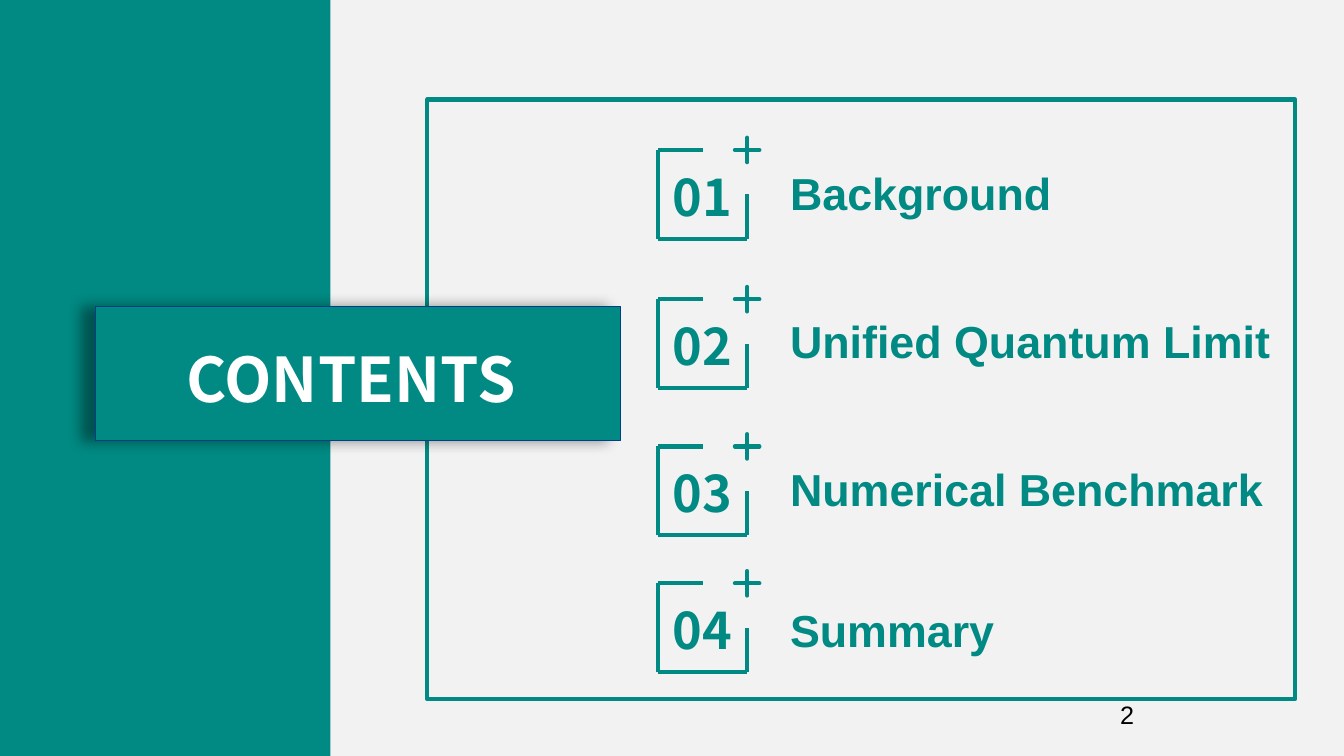
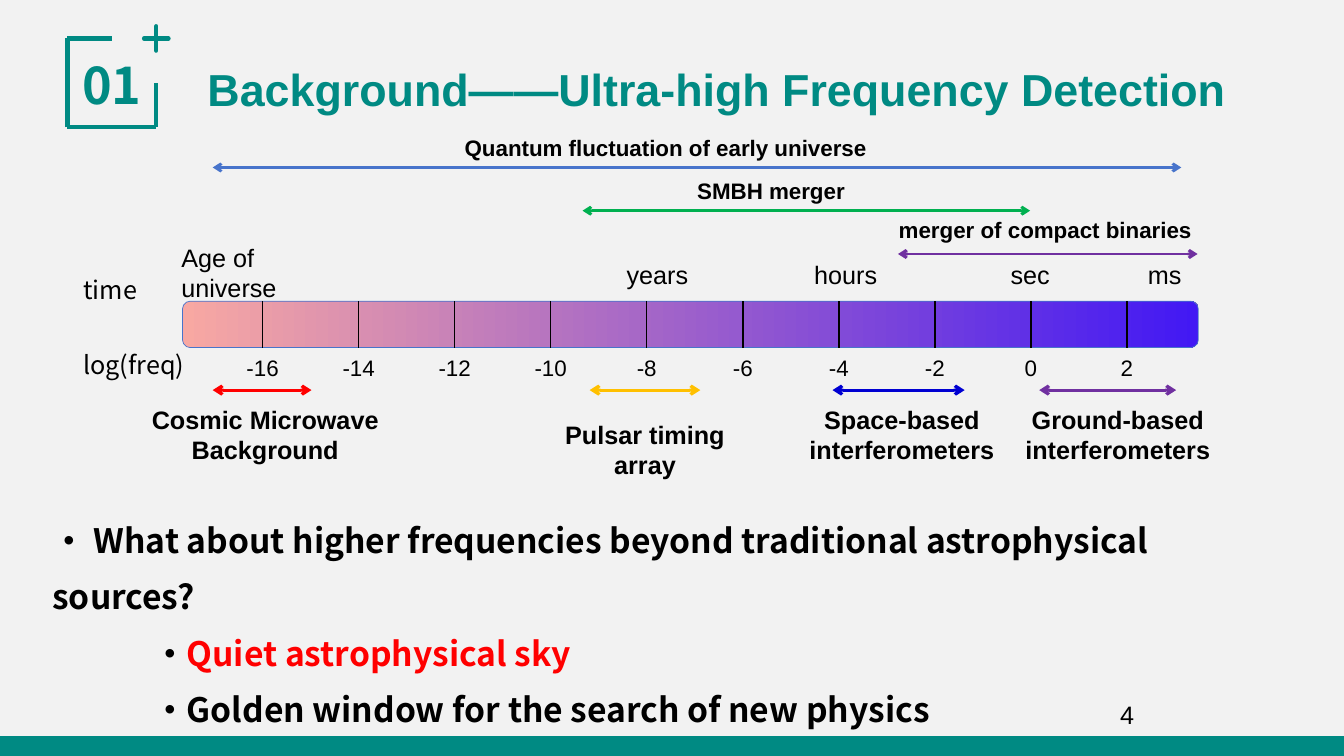
from dataclasses import dataclass
from typing import NamedTuple

from lxml.etree import SubElement
from pptx import Presentation
from pptx.dml.color import RGBColor
from pptx.enum.shapes import MSO_CONNECTOR, MSO_SHAPE
from pptx.enum.text import MSO_ANCHOR, PP_ALIGN
from pptx.oxml.ns import qn
from pptx.shapes.autoshape import Shape
from pptx.shapes.connector import Connector
from pptx.slide import Slide
from pptx.text.text import _Paragraph as Paragraph
from pptx.text.text import _Run as Run
from pptx.util import Cm, Pt


@dataclass(frozen=True)
class Theme:
    background: str = "F2F2F2"
    teal: str = "008A83"
    navy: str = "003E87"
    blue: str = "4874CB"
    black: str = "000000"
    white: str = "FFFFFF"
    red: str = "FF0000"
    green: str = "00B050"
    amber: str = "FFC000"
    deep_blue: str = "0000D2"
    purple: str = "7030A0"
    low_frequency: str = "F8A8A2"
    high_frequency: str = "4218F4"
    latin_font: str = "Arial"
    display_font: str = "Noto Sans CJK SC"
    banner_size: float = 44
    badge_size: float = 36
    title_size: float = 32
    body_size: float = 24
    label_size: float = 18
    small_size: float = 16
    rule_width: float = 3


THEME = Theme()
SLIDE_WIDTH, SLIDE_HEIGHT = 33.87, 19.05


class Box(NamedTuple):
    """Left, top, width and height in centimetres."""
    left: float
    top: float
    width: float
    height: float


class Style(NamedTuple):
    size: float
    color: str = THEME.black
    bold: bool = False
    font: str = THEME.latin_font
    align: PP_ALIGN = PP_ALIGN.LEFT


class Entry(NamedTuple):
    title: str
    badge_top: float
    title_top: float


class Span(NamedTuple):
    """A double arrow on the frequency axis with its label."""
    label: str
    color: str
    start: float
    end: float
    y: float
    label_box: Box


class Label(NamedTuple):
    text: str
    box: Box
    style: Style


TITLE = Style(THEME.title_size, THEME.teal, True)
BADGE = Style(THEME.badge_size, THEME.teal, True, THEME.display_font, PP_ALIGN.CENTER)
BANNER = Style(THEME.banner_size, THEME.white, True, THEME.display_font)
PAGE_NUMBER = Style(THEME.label_size, align=PP_ALIGN.CENTER)
TIME = Style(THEME.label_size)
AXIS = Style(THEME.label_size, font=THEME.display_font)
TICK = Style(THEME.small_size, align=PP_ALIGN.CENTER)
SOURCE = Style(THEME.small_size, bold=True)
DETECTOR = Style(THEME.label_size, bold=True, align=PP_ALIGN.CENTER)
BODY = Style(THEME.body_size, bold=True, font=THEME.display_font)

ENTRIES = (
    Entry("Background", 3.78, 4.06),
    Entry("Unified Quantum Limit", 7.54, 7.77),
    Entry("Numerical Benchmark", 11.25, 11.51),
    Entry("Summary", 14.7, 15.06),
)

SOURCES = (
    Span("Quantum fluctuation of early universe", THEME.blue, 5.36, 29.77, 4.22,
         Box(11.46, 3.25, 13.3, 0.94)),
    Span("SMBH merger", THEME.green, 14.68, 25.96, 5.31, Box(17.32, 4.34, 6, 0.94)),
    Span("merger of compact binaries", THEME.purple, 22.63, 30.18, 6.4,
         Box(22.4, 5.33, 9.5, 0.94)),
)

DETECTORS = (
    Span("Cosmic Microwave Background", THEME.red, 5.36, 7.85, 9.83,
         Box(3.33, 10.06, 6.71, 1.8)),
    Span("Pulsar timing array", THEME.amber, 14.86, 17.65, 9.83,
         Box(13.36, 10.44, 5.79, 1.8)),
    Span("Space-based interferometers", THEME.deep_blue, 20.98, 24.31, 9.83,
         Box(19.76, 10.06, 5.94, 1.8)),
    Span("Ground-based interferometers", THEME.purple, 26.19, 29.64, 9.83,
         Box(25.4, 10.06, 5.54, 1.8)),
)

AXIS_LABELS = (
    Label("time", Box(1.85, 6.78, 4.5, 1.02), AXIS),
    Label("log(freq)", Box(1.85, 8.69, 4.75, 1.02), AXIS),
    Label("Age of universe", Box(4.32, 5.97, 4.75, 1.8), TIME),
    Label("years", Box(15.54, 6.4, 2.3, 1.02), TIME),
    Label("hours", Box(20.27, 6.4, 2.3, 1.02), TIME),
    Label("sec", Box(25.22, 6.4, 2.3, 1.02), TIME),
    Label("ms", Box(28.68, 6.4, 2.3, 1.02), TIME),
)


# Basic drawing
def rgb(color: str) -> RGBColor:
    return RGBColor.from_string(color)


def format_run(run: Run, style: Style) -> None:
    run.font.size = Pt(style.size)
    run.font.bold = style.bold
    run.font.name = style.font
    run.font.color.rgb = rgb(style.color)
    SubElement(run._r.get_or_add_rPr(), qn("a:ea")).set("typeface", style.font)


def format_paragraph(paragraph: Paragraph, style: Style) -> None:
    paragraph.alignment = style.align
    for run in paragraph.runs:
        format_run(run, style)


def add_text(slide: Slide, text: str, box: Box, style: Style, wrap: bool = True,
             anchor: MSO_ANCHOR = MSO_ANCHOR.TOP) -> Shape:
    shape = slide.shapes.add_textbox(*map(Cm, box))
    text_frame = shape.text_frame
    text_frame.word_wrap = wrap
    text_frame.vertical_anchor = anchor
    text_frame.text = text
    for paragraph in text_frame.paragraphs:
        format_paragraph(paragraph, style)
    return shape


def add_block(slide: Slide, kind: MSO_SHAPE, box: Box, fill: str | None = None,
              line: str | None = None, width: float = THEME.rule_width) -> Shape:
    shape = slide.shapes.add_shape(kind, *map(Cm, box))
    shape.shadow.inherit = False
    if fill:
        shape.fill.solid()
        shape.fill.fore_color.rgb = rgb(fill)
    else:
        shape.fill.background()
    if line:
        shape.line.color.rgb = rgb(line)
        shape.line.width = Pt(width)
    else:
        shape.line.fill.background()
    return shape


def add_line(slide: Slide, start: tuple[float, float], end: tuple[float, float],
             color: str, width: float, arrows: bool = False) -> Connector:
    connector = slide.shapes.add_connector(
        MSO_CONNECTOR.STRAIGHT, *map(Cm, (*start, *end)))
    connector.line.color.rgb = rgb(color)
    connector.line.width = Pt(width)
    properties = connector._element.spPr
    if arrows:
        for tag in ("a:headEnd", "a:tailEnd"):
            SubElement(properties.find(qn("a:ln")), qn(tag)).set("type", "arrow")
    SubElement(properties, qn("a:effectLst"))
    return connector


def add_left_shadow(shape: Shape) -> None:
    effects = shape._element.spPr.find(qn("a:effectLst"))
    shadow = SubElement(effects, qn("a:outerShdw"))
    settings = {"blurRad": Pt(10), "dist": Pt(10), "dir": 180 * 60000,
                "algn": "r", "rotWithShape": 0}
    for name, value in settings.items():
        shadow.set(name, str(value))
    color = SubElement(shadow, qn("a:srgbClr"))
    color.set("val", THEME.black)
    SubElement(color, qn("a:alpha")).set("val", "40000")


# Shared parts
def add_slide(presentation: Presentation, number: int) -> Slide:
    slide = presentation.slides.add_slide(presentation.slide_layouts[6])
    slide.background.fill.solid()
    slide.background.fill.fore_color.rgb = rgb(THEME.background)
    add_text(slide, str(number), Box(24.66, 17.55, 7.49, 0.89), PAGE_NUMBER,
             anchor=MSO_ANCHOR.MIDDLE)
    return slide


def add_badge(slide: Slide, number: int, left: float, top: float) -> None:
    side, plus = 2.24, 0.84
    right, bottom = left + side, top + side
    add_text(slide, f"{number:02d}", Box(left - 0.33, top + 0.28, 2.9, 1.8), BADGE)
    cross = add_block(slide, MSO_SHAPE.MATH_PLUS,
                      Box(right - plus / 2, top - plus / 2, plus, plus),
                      THEME.navy, THEME.teal)
    cross.adjustments[0] = 0
    strokes = (
        ((left, top), (left + side / 2, top)),
        ((left, bottom), (left, top)),
        ((left, bottom), (right, bottom)),
        ((right, bottom), (right, top + side / 2)),
    )
    for start, end in strokes:
        add_line(slide, start, end, THEME.teal, THEME.rule_width)


# Contents slide
def build_contents(presentation: Presentation) -> None:
    slide = add_slide(presentation, 2)
    add_block(slide, MSO_SHAPE.RECTANGLE, Box(0, 0, 8.33, SLIDE_HEIGHT), THEME.teal)
    add_block(slide, MSO_SHAPE.RECTANGLE, Box(10.77, 2.51, 21.87, 15.11),
              line=THEME.teal)
    banner = add_block(slide, MSO_SHAPE.RECTANGLE, Box(2.41, 7.72, 13.23, 3.38),
                       THEME.teal, THEME.navy, 1)
    add_left_shadow(banner)
    add_text(slide, "CONTENTS", Box(4.45, 8.46, 9.2, 2.13), BANNER, wrap=False)
    for number, entry in enumerate(ENTRIES, start=1):
        add_badge(slide, number, 16.59, entry.badge_top)
        add_text(slide, entry.title, Box(19.66, entry.title_top, 13.7, 1.63), TITLE)


# Background slide
def add_span(slide: Slide, span: Span, style: Style, width: float) -> None:
    add_line(slide, (span.start, span.y), (span.end, span.y), span.color, width, True)
    add_text(slide, span.label, span.label_box, style)


def add_frequency_axis(slide: Slide) -> None:
    bar = Box(4.6, 7.59, 25.6, 1.17)
    shape = add_block(slide, MSO_SHAPE.ROUNDED_RECTANGLE, bar, line=THEME.blue, width=0.5)
    shape.fill.gradient()
    shape.fill.gradient_angle = 0
    for stop, color in zip(shape.fill.gradient_stops,
                           (THEME.low_frequency, THEME.high_frequency)):
        stop.color.rgb = rgb(color)
    first_tick, tick_gap, label_width = 6.62, 2.42, 1.6
    for index, exponent in enumerate(range(-16, 3, 2)):
        x = first_tick + index * tick_gap
        add_line(slide, (x, bar.top), (x, bar.top + bar.height), THEME.black, 1)
        add_text(slide, str(exponent), Box(x - label_width / 2, 8.81, label_width, 0.94),
                 TICK)
    for label in AXIS_LABELS:
        add_text(slide, *label)


def add_questions(slide: Slide) -> None:
    lines = (
        "· What about higher frequencies beyond traditional astrophysical sources?",
        "·",
        "·Golden window for the search of new physics",
    )
    shape = add_text(slide, "\n".join(lines), Box(1.07, 12.57, 31.09, 4.57), BODY)
    question, quiet, golden = shape.text_frame.paragraphs
    highlight = quiet.add_run()
    highlight.text = "Quiet astrophysical sky"
    format_run(highlight, BODY._replace(color=THEME.red))
    for paragraph in (question, quiet, golden):
        paragraph.line_spacing = 1.4
    for paragraph in (quiet, golden):
        paragraph.level = 1
        for name in ("marL", "indent"):
            paragraph._p.get_or_add_pPr().set(name, str(Cm(1.27)))


def build_background(presentation: Presentation) -> None:
    slide = add_slide(presentation, 4)
    add_text(slide, "Background——Ultra-high Frequency Detection",
             Box(4.98, 1.42, 27.8, 1.63), TITLE)
    add_badge(slide, 1, 1.7, 0.97)
    add_block(slide, MSO_SHAPE.RECTANGLE, Box(0, 18.55, SLIDE_WIDTH, 0.5), THEME.teal)
    add_frequency_axis(slide)
    for span in SOURCES:
        add_span(slide, span, SOURCE, 2)
    for span in DETECTORS:
        add_span(slide, span, DETECTOR, 2.25)
    add_questions(slide)


def main() -> None:
    presentation = Presentation()
    presentation.slide_width = Cm(SLIDE_WIDTH)
    presentation.slide_height = Cm(SLIDE_HEIGHT)
    build_contents(presentation)
    build_background(presentation)
    presentation.save("out.pptx")


if __name__ == "__main__":
    main()
